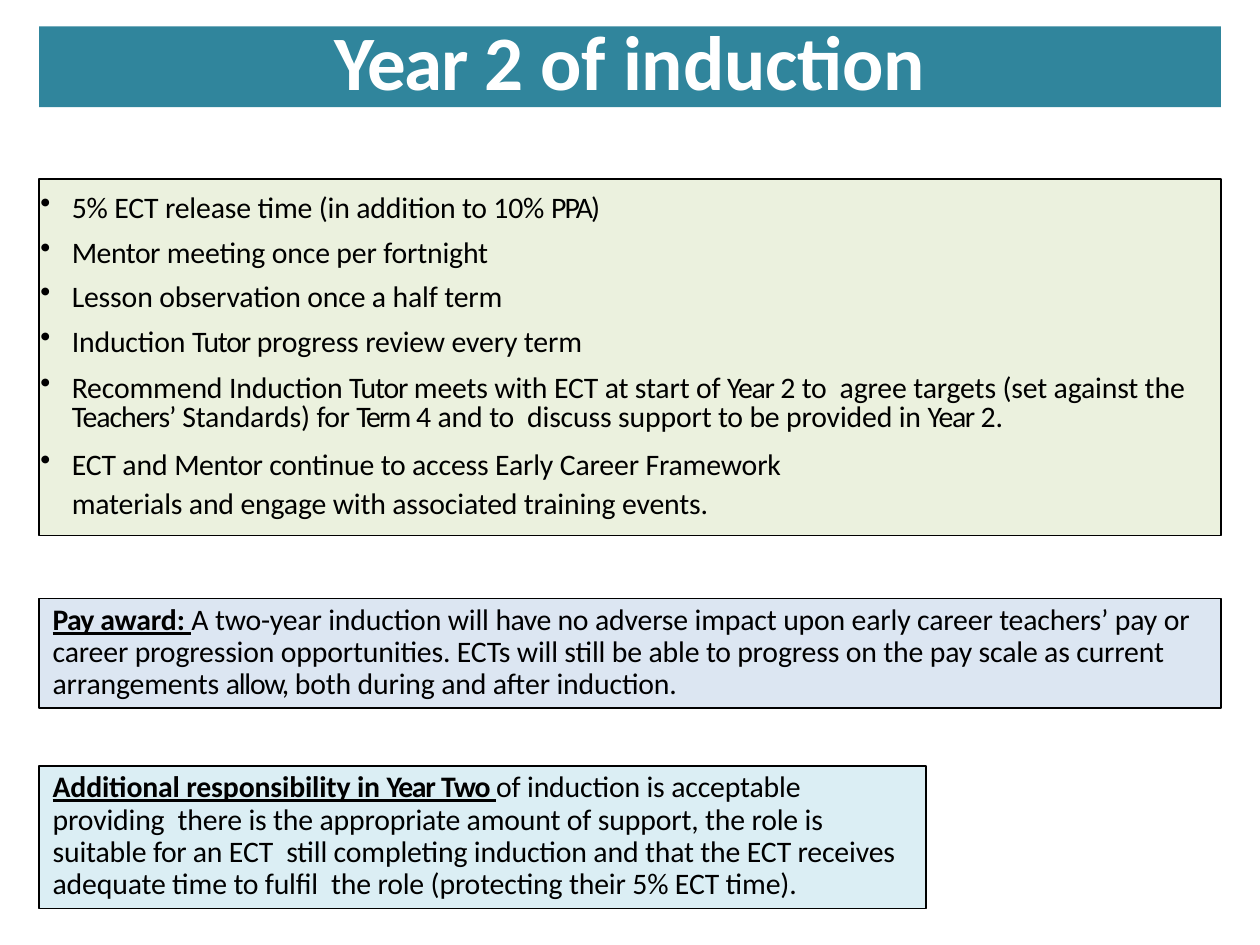
from itertools import groupby

from lxml.etree import SubElement
from pptx import Presentation
from pptx.dml.color import RGBColor
from pptx.enum.shapes import MSO_SHAPE
from pptx.enum.text import MSO_ANCHOR, PP_ALIGN
from pptx.oxml.ns import qn
from pptx.util import Inches, Pt

COLOURS = {
    "title": "30859C",
    "duties": "EBF1DE",
    "pay": "DCE6F2",
    "responsibility": "DBEEF4",
    "text": "000000",
    "white": "FFFFFF",
}

# Letter spacing in points for words set tighter than the rest
NORMAL_SPACING = -0.1
TIGHT_WORDS = {
    "PPA)": -1.1, "Term": -1.1, "Year": -0.8, "Tutor": -0.7, "Two": -0.7,
    "allow,": -0.7, "Teachers’": -0.6, "Pay": -0.5, "for": -0.3,
    "to": -0.25, "Mentor": -0.3, "have": -0.3,
}


def word_spacing(word):
    return TIGHT_WORDS.get(word.strip(), NORMAL_SPACING)


def write(paragraph, text, size=17, colour="text", bold=False, underline=False):
    """Add text to a paragraph, one run per stretch of equal letter spacing."""
    for spacing, words in groupby(text.split(" "), key=word_spacing):
        if paragraph.runs and not paragraph.runs[-1].text.endswith(" "):
            paragraph.runs[-1].text += " "
        run = paragraph.add_run()
        run.text = " ".join(words)
        run.font.name = "Calibri"
        run.font.size = Pt(size)
        run.font.bold = bold
        run.font.underline = underline
        run.font.color.rgb = RGBColor.from_string(COLOURS[colour])
        run._r.get_or_add_rPr().set("spc", str(round(spacing * 100)))


class InductionSlide:
    left = 0.31
    full_width = 9.38

    def __init__(self, presentation):
        self.slide = presentation.slides.add_slide(presentation.slide_layouts[6])

    def panel(self, top, height, fill, width=full_width, outlined=True,
              insets=(0.1, 0.05, 0.1, 0.05)):
        """Draw a filled rectangle and return its text frame."""
        box = self.slide.shapes.add_shape(
            MSO_SHAPE.RECTANGLE, Inches(self.left), Inches(top),
            Inches(width), Inches(height))
        box.shadow.inherit = False
        box.fill.solid()
        box.fill.fore_color.rgb = RGBColor.from_string(COLOURS[fill])
        if outlined:
            box.line.color.rgb = RGBColor.from_string(COLOURS["text"])
            box.line.width = Pt(0.75)
        else:
            box.line.fill.background()
        frame = box.text_frame
        frame.word_wrap = True
        frame.vertical_anchor = MSO_ANCHOR.TOP
        (frame.margin_left, frame.margin_top,
         frame.margin_right, frame.margin_bottom) = map(Inches, insets)
        return frame

    def title(self, text):
        frame = self.panel(0.21, 0.64, "title", outlined=False, insets=(0, 0, 0, 0))
        heading = frame.paragraphs[0]
        heading.alignment = PP_ALIGN.CENTER
        heading.line_spacing = Pt(45.5)
        write(heading, text, size=44, colour="white", bold=True)

    def bullet_list(self, top, height, fill, items):
        """Each item is text, space before, line spacing and bullet flag."""
        frame = self.panel(top, height, fill, insets=(0, 0.08, 0, 0))
        for number, (text, before, line_spacing, bulleted) in enumerate(items):
            item = frame.paragraphs[0] if number == 0 else frame.add_paragraph()
            item.alignment = PP_ALIGN.LEFT
            properties = item._p.get_or_add_pPr()
            properties.set("marL", str(Inches(0.26)))
            properties.set("indent", str(Inches(-0.25 if bulleted else 0)))
            if bulleted:
                SubElement(properties, qn("a:buChar")).set("char", "•")
            item.space_before = Pt(before)
            item.line_spacing = line_spacing
            write(item, text)

    def note(self, top, height, fill, lead, text, **panel_format):
        """Draw a panel whose text opens with an underlined lead."""
        frame = self.panel(top, height, fill, **panel_format)
        body = frame.paragraphs[0]
        body.alignment = PP_ALIGN.LEFT
        body._p.get_or_add_pPr().set("marL", str(Inches(0.01)))
        body.line_spacing = 0.9
        write(body, lead, bold=True, underline=True)
        write(body, text)


def main():
    presentation = Presentation()
    presentation.slide_width = Inches(10)
    presentation.slide_height = Inches(7.5)
    induction = InductionSlide(presentation)

    # Entitlements and duties
    induction.bullet_list(1.42, 2.83, "duties", [
        ("5% ECT release time (in addition to 10% PPA)", 0, 1.0, True),
        ("Mentor meeting once per fortnight", 5, 1.0, True),
        ("Lesson observation once a half term", 4.8, 1.0, True),
        ("Induction Tutor progress review every term", 5.2, 1.0, True),
        ("Recommend Induction Tutor meets with ECT at start of Year 2 to  agree "
         "targets (set against the Teachers’ Standards) for Term 4 and to  discuss "
         "support to be provided in Year 2.", 10.3, 0.8, True),
        ("ECT and Mentor continue to access Early Career Framework",
         4.8, Pt(22.6), True),
        ("materials and engage with associated training events.",
         0, Pt(22.6), False),
    ])

    # Title band
    induction.title("Year 2 of induction")

    # Pay and extra responsibility
    induction.note(
        4.75, 0.87, "pay", "Pay award:",
        "A two-year induction will have no adverse impact upon early career "
        "teachers’ pay or career progression opportunities. ECTs will still be "
        "able to progress on the pay scale as current  arrangements allow, both "
        "during and after induction.")
    induction.note(
        6.08, 1.13, "responsibility", "Additional responsibility in Year Two",
        "of induction is acceptable providing  there is the appropriate amount of "
        "support, the role is suitable for an ECT  still completing induction and "
        "that the ECT receives adequate time to fulfil  the role (protecting their "
        "5% ECT time).", width=7.04)

    presentation.save("out.pptx")


if __name__ == "__main__":
    main()
